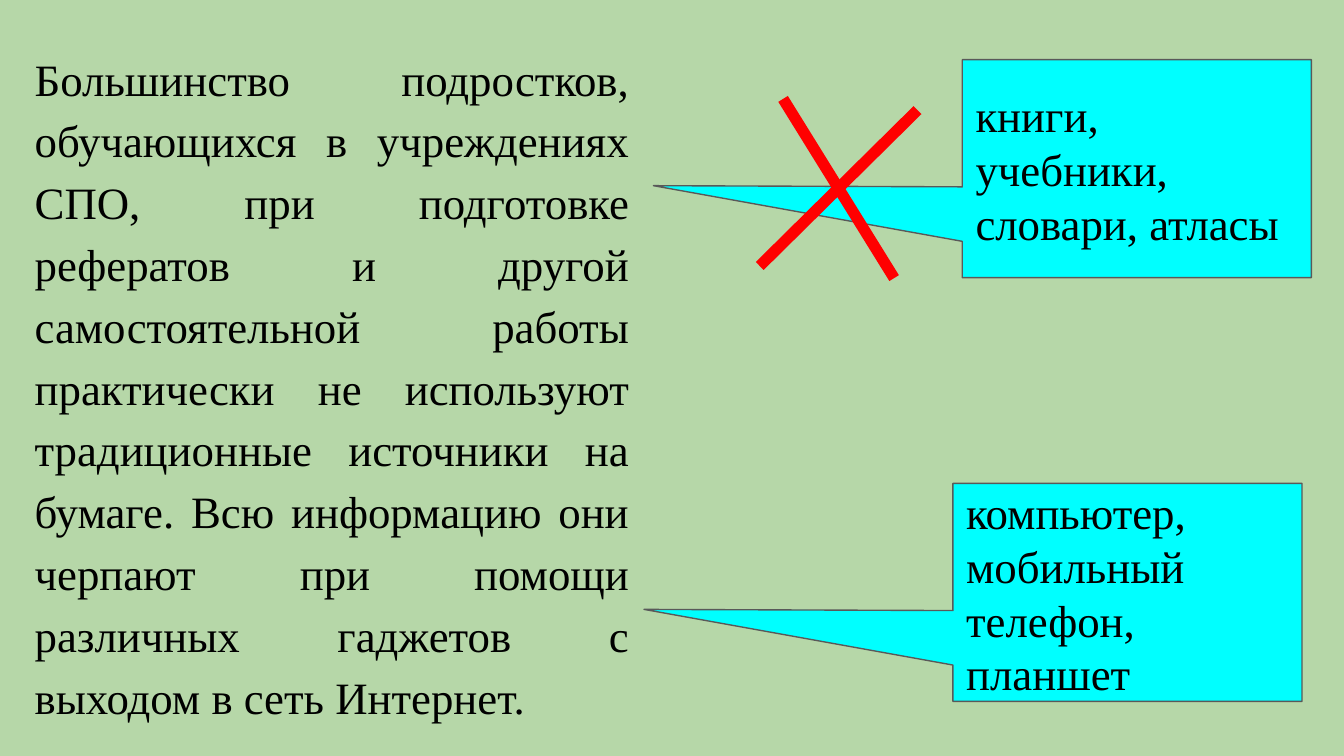
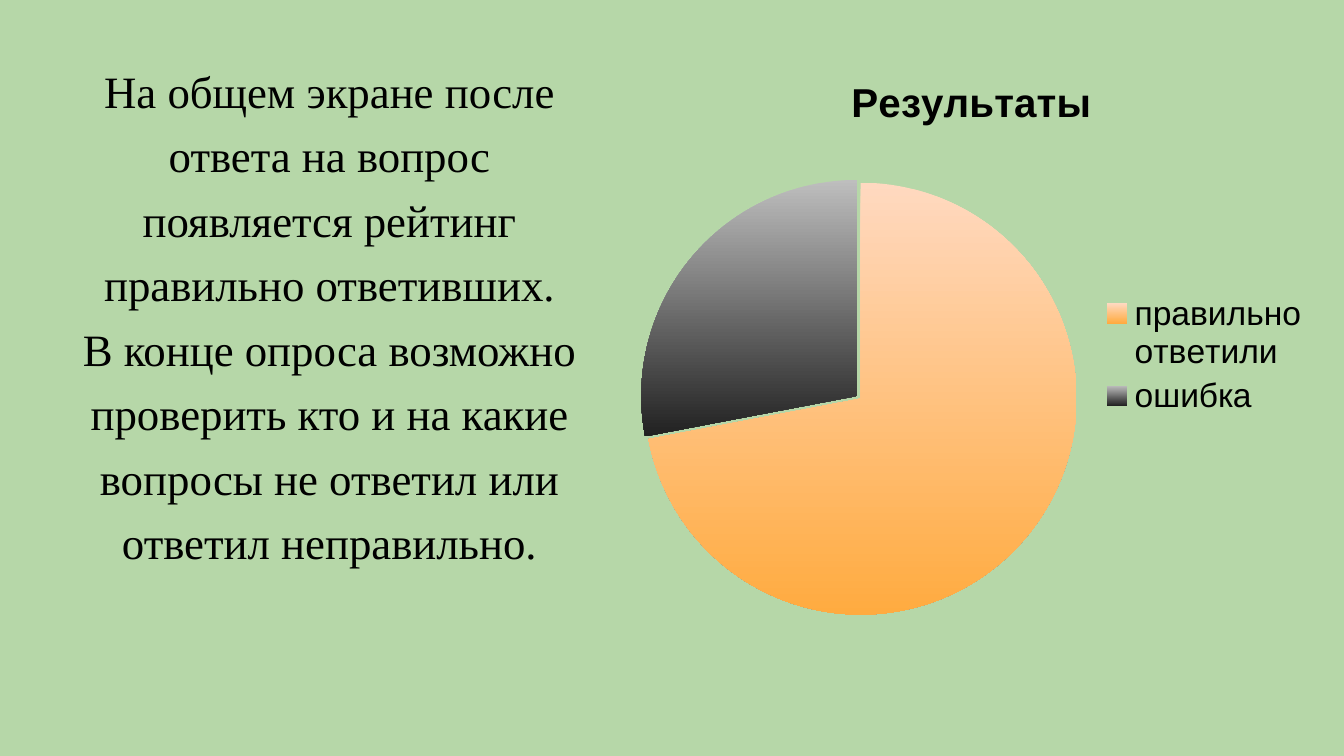
import pptx
import pptx.chart.data
import pptx.dml.color
import pptx.enum.chart
import pptx.enum.shapes
import pptx.enum.text
import pptx.oxml
import pptx.oxml.ns
import pptx.util

Pt = pptx.util.Pt
ALIGN = pptx.enum.text.PP_ALIGN
ANCHOR = pptx.enum.text.MSO_ANCHOR
COLORS = {
    name: pptx.dml.color.RGBColor.from_string(value)
    for name, value in {
        "background": "B6D7A8", "text": "000000", "callout": "00FFFF",
        "outline": "595959", "cross": "FF0000",
        "correct": "FFAB40", "correct_light": "FFD9C0",
        "mistake": "212121", "mistake_light": "BEBEBE",
    }.items()
}


def write_text(shape, paragraphs, anchor, **paragraph_format):
    """Fill a shape with 24 pt serif paragraphs that share one format."""
    frame = shape.text_frame
    frame.word_wrap = True
    frame.vertical_anchor = anchor
    for side in ("left", "top", "right", "bottom"):
        setattr(frame, f"margin_{side}", Pt(7.2))
    frame.text = "\n".join(paragraphs)
    for paragraph in frame.paragraphs:
        for name, value in paragraph_format.items():
            setattr(paragraph, name, value)
        for run in paragraph.runs:
            run.font.name = "Times New Roman"
            run.font.size = Pt(24)
            run.font.color.rgb = COLORS["text"]


presentation = pptx.Presentation()
presentation.slide_width, presentation.slide_height = Pt(720), Pt(405)
slides = []
for _ in range(2):
    slide = presentation.slides.add_slide(presentation.slide_layouts[6])
    slide.background.fill.solid()
    slide.background.fill.fore_color.rgb = COLORS["background"]
    slides.append(slide)
sources_slide, results_slide = slides

# Slide 1: where teenagers look for information
body = sources_slide.shapes.add_textbox(Pt(11.5), Pt(16), Pt(332.5), Pt(373))
write_text(
    body,
    ["Большинство подростков, обучающихся в учреждениях СПО, при подготовке "
     "рефератов и другой самостоятельной работы практически не используют "
     "традиционные источники на бумаге. Всю информацию они черпают при помощи "
     "различных гаджетов с выходом в сеть Интернет."],
    ANCHOR.TOP, alignment=ALIGN.JUSTIFY, line_spacing=1.15, space_before=Pt(6),
)

for left, top, sources in (
    (515.5, 32, "книги, учебники, словари, атласы"),
    (510.5, 259, "компьютер, мобильный телефон, планшет"),
):
    callout = sources_slide.shapes.add_shape(
        pptx.enum.shapes.MSO_SHAPE.RECTANGULAR_CALLOUT,
        Pt(left), Pt(top), Pt(187), Pt(116.8))
    callout.adjustments[0], callout.adjustments[1] = -1.385, 0.078
    callout.shadow.inherit = False
    callout.fill.solid()
    callout.fill.fore_color.rgb = COLORS["callout"]
    callout.line.color.rgb = COLORS["outline"]
    callout.line.width = Pt(0.75)
    write_text(callout, [sources], ANCHOR.MIDDLE, alignment=ALIGN.LEFT)

for ends in ((491.5, 59, 407, 142.5), (419.5, 53, 479, 149)):
    stroke = sources_slide.shapes.add_connector(
        pptx.enum.shapes.MSO_CONNECTOR.STRAIGHT, *map(Pt, ends))
    stroke.line.color.rgb = COLORS["cross"]
    stroke.line.width = Pt(6)
    stroke._element.spPr.append(pptx.oxml.parse_xml(
        f"<a:effectLst {pptx.oxml.ns.nsdecls('a')}/>"))

# Slide 2: survey results
body = results_slide.shapes.add_textbox(Pt(24.5), Pt(21), Pt(304), Pt(339))
write_text(
    body,
    ["На общем экране после ответа на вопрос появляется рейтинг правильно "
     "ответивших.",
     "В конце опроса возможно проверить кто и на какие вопросы не ответил или "
     "ответил неправильно."],
    ANCHOR.TOP, alignment=ALIGN.CENTER, line_spacing=1.2,
)

chart_data = pptx.chart.data.CategoryChartData()
chart_data.categories = ["правильно ответили", "ошибка"]
chart_data.add_series("Результаты", (72, 28))
chart = results_slide.shapes.add_chart(
    pptx.enum.chart.XL_CHART_TYPE.PIE,
    Pt(332), Pt(26.5), Pt(377), Pt(327), chart_data).chart

chart.has_title = True
chart.chart_title.text_frame.text = "Результаты"
title_font = chart.chart_title.text_frame.paragraphs[0].runs[0].font
chart.has_legend = True
chart.legend.position = pptx.enum.chart.XL_LEGEND_POSITION.RIGHT
chart.legend.include_in_layout = False
for font, size, bold in ((chart.font, 18, False), (title_font, 21.6, True)):
    for name, value in {"name": "Arial", "size": Pt(size), "bold": bold}.items():
        setattr(font, name, value)
    font.color.rgb = COLORS["text"]

plot = chart.plots[0]
plot.vary_by_categories = True
series = plot.series[0]
chart_namespace = pptx.oxml.ns.nsdecls("c")
series._element.find(pptx.oxml.ns.qn("c:tx")).addnext(
    pptx.oxml.parse_xml(f'<c:explosion {chart_namespace} val="1"/>'))
for index, name in enumerate(("correct", "mistake")):
    point_format = series.points[index].format
    point_format.line.fill.background()
    fill = point_format.fill
    fill.gradient()
    fill.gradient_angle = 270
    for stop, color in zip(fill.gradient_stops, (f"{name}_light", name)):
        stop.color.rgb = COLORS[color]

plot_area = chart._chartSpace.chart.plotArea
for layout in plot_area.findall(pptx.oxml.ns.qn("c:layout")):
    plot_area.remove(layout)
plot_area.insert(0, pptx.oxml.parse_xml(
    f'<c:layout {chart_namespace}><c:manualLayout><c:layoutTarget val="inner"/>'
    '<c:xMode val="edge"/><c:yMode val="edge"/><c:x val="0.03"/><c:y val="0.21"/>'
    '<c:w val="0.62"/><c:h val="0.72"/></c:manualLayout></c:layout>'))

presentation.save("out.pptx")
